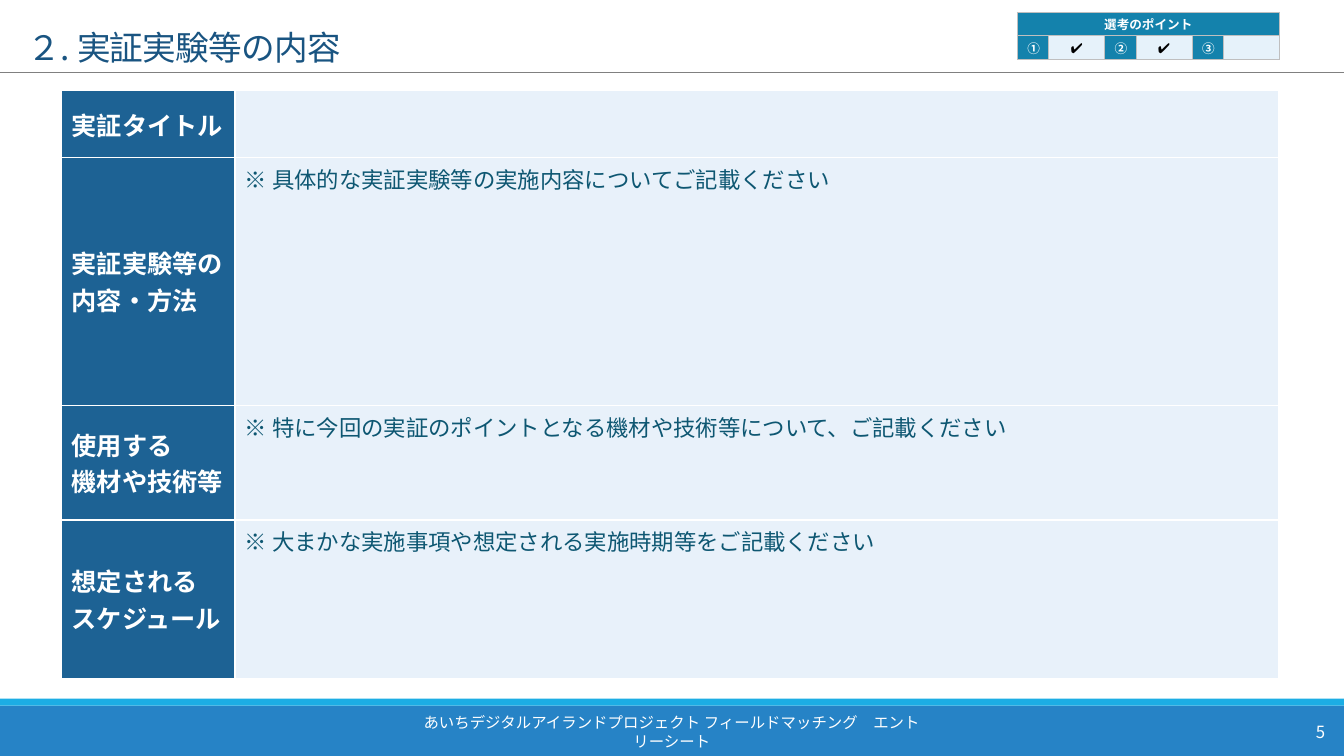
from dataclasses import dataclass

import pptx
import pptx.dml.color
import pptx.enum.shapes
import pptx.enum.text
import pptx.oxml
import pptx.oxml.ns
import pptx.util

FONT = "Noto Sans CJK JP"
WHITE, BLACK = "FFFFFF", "000000"
ALIGN = pptx.enum.text.PP_ALIGN
ANCHOR = pptx.enum.text.MSO_ANCHOR
qn = pptx.oxml.ns.qn

prs = pptx.Presentation()
prs.slide_width = pptx.util.Inches(13.33)
prs.slide_height = pptx.util.Inches(7.5)


@dataclass(frozen=True)
class Style:
    size: float
    color: str
    bold: bool = False
    align: ALIGN = ALIGN.LEFT
    anchor: ANCHOR = ANCHOR.MIDDLE
    hanging: float = 0  # inches


@dataclass(frozen=True)
class Cell:
    text: str
    fill: str
    style: Style


@dataclass(frozen=True)
class Box:
    """A place on a grid of 100 columns by 100 rows."""
    col: float
    row: float
    cols: float
    rows: float

    def emu(self) -> tuple[int, int, int, int]:
        return x(self.col), y(self.row), x(self.cols), y(self.rows)


def x(cols: float) -> int:
    return round(prs.slide_width * cols / 100)


def y(rows: float) -> int:
    return round(prs.slide_height * rows / 100)


def rgb(color: str) -> pptx.dml.color.RGBColor:
    return pptx.dml.color.RGBColor.from_string(color)


def write(tf, text: str, style: Style) -> None:
    """Put each line of the text in its own styled paragraph."""
    for i, line in enumerate(text.split("\n")):
        p = tf.add_paragraph() if i else tf.paragraphs[0]
        p.alignment = style.align
        p.font.name, p.font.bold = FONT, style.bold
        p.font.size = pptx.util.Pt(style.size)
        p.font.color.rgb = rgb(style.color)
        pPr = p._p.get_or_add_pPr()
        latin = pPr.find(qn("a:defRPr")).find(qn("a:latin"))
        ea = pptx.oxml.parse_xml(f'<a:ea {pptx.oxml.ns.nsdecls("a")} typeface="{FONT}"/>')
        latin.addnext(ea)
        if style.hanging:
            indent = pptx.util.Inches(style.hanging)
            pPr.set("marL", str(indent))
            pPr.set("indent", str(-indent))
        if line:
            p.add_run().text = line
        else:
            p._p.get_or_add_endParaRPr().set("sz", str(round(style.size * 100)))


def add_bar(slide, box: Box, color: str) -> None:
    sp = slide.shapes.add_shape(pptx.enum.shapes.MSO_SHAPE.RECTANGLE, *box.emu())
    sp.shadow.inherit = False
    sp.fill.solid()
    sp.fill.fore_color.rgb = rgb(color)
    sp.line.fill.background()


def add_rule(slide, row: float, color: str) -> None:
    line = slide.shapes.add_connector(
        pptx.enum.shapes.MSO_CONNECTOR.STRAIGHT, 0, y(row), x(100), y(row))
    line.line.color.rgb = rgb(color)
    line.line.width = pptx.util.Pt(0.5)
    line._element.spPr.append(
        pptx.oxml.parse_xml(f'<a:effectLst {pptx.oxml.ns.nsdecls("a")}/>'))


def add_text(slide, box: Box, text: str, style: Style) -> None:
    tf = slide.shapes.add_textbox(*box.emu()).text_frame
    tf.word_wrap = True
    tf.vertical_anchor = style.anchor
    write(tf, text, style)


def set_borders(cell, color: str, width: float) -> None:
    tcPr = cell._tc.get_or_add_tcPr()
    for i, side in enumerate(("lnL", "lnR", "lnT", "lnB")):
        tcPr.insert(i, pptx.oxml.parse_xml(
            f'<a:{side} {pptx.oxml.ns.nsdecls("a")} w="{pptx.util.Pt(width)}">'
            f'<a:solidFill><a:srgbClr val="{color}"/></a:solidFill></a:{side}>'))


def add_table(slide, col: float, row: float, cols: list[float], rows: list[float],
              cells: list[list[Cell]], border: tuple[str, float],
              margin: float = 0.05) -> None:
    """Draw a table; a row holding a single cell spans every column."""
    box = Box(col, row, sum(cols), sum(rows))
    table = slide.shapes.add_table(len(rows), len(cols), *box.emu()).table
    table.first_row = table.horz_banding = False
    for column, width in zip(table.columns, cols):
        column.width = x(width)
    for r, (height, row_cells) in enumerate(zip(rows, cells)):
        table.rows[r].height = y(height)
        if len(row_cells) == 1:
            table.cell(r, 0).merge(table.cell(r, len(cols) - 1))
        for c in range(len(cols)):
            cell = table.cell(r, c)
            set_borders(cell, *border)
            cell.margin_top = cell.margin_bottom = pptx.util.Inches(margin)
            if c < len(row_cells):
                content = row_cells[c]
                cell.fill.solid()
                cell.fill.fore_color.rgb = rgb(content.fill)
                cell.vertical_anchor = content.style.anchor
                write(cell.text_frame, content.text, content.style)


def add_title(slide, box: Box, text: str) -> None:
    title = slide.shapes.title
    title.left, title.top, title.width, title.height = box.emu()
    tf = title.text_frame
    tf.auto_size = pptx.enum.text.MSO_AUTO_SIZE.NONE
    tf.vertical_anchor = ANCHOR.BOTTOM
    write(tf, text, Style(24, "195481"))
    p = tf.paragraphs[0]
    p.line_spacing = 0.85
    p._p.pPr.find(qn("a:defRPr")).set("spc", "-50")


def main() -> None:
    slide = prs.slides.add_slide(prs.slide_layouts[5])
    add_bar(slide, Box(0, 93.33, 100, 6.67), "2683C6")
    add_bar(slide, Box(0, 92.4, 100, 0.93), "1CADE4")
    add_rule(slide, 9.6, "808080")
    add_title(slide, Box(1.28, 0, 98.72, 9.6), "２. 実証実験等の内容")

    label = Style(18, WHITE, bold=True)
    guide = Style(16, "0E5772", anchor=ANCHOR.TOP, hanging=0.29)
    entries = [
        ("実証タイトル", ""),
        ("実証実験等の\n内容・方法", "※ 具体的な実証実験等の実施内容についてご記載ください"),
        ("使用する\n機材や技術等",
         "※ 特に今回の実証のポイントとなる機材や技術等について、ご記載ください"),
        ("想定される\nスケジュール", "※ 大まかな実施事項や想定される実施時期等をご記載ください"),
    ]
    add_table(slide, 4.58, 12, [12.9, 77.64], [8.8, 32.8, 15.2, 20.93],
              [[Cell(name, "1D6294", label), Cell(note, "E8F1FA", guide)]
               for name, note in entries], (WHITE, 1))

    footer = "あいちデジタルアイランドプロジェクト フィールドマッチング　エントリーシート"
    add_text(slide, Box(30.23, 94.13, 39.53, 5.33), footer,
             Style(11, WHITE, align=ALIGN.CENTER))
    add_text(slide, Box(88.6, 94.13, 10.73, 5.33), "5",
             Style(12, WHITE, align=ALIGN.RIGHT))

    point = Style(9, WHITE, bold=True, align=ALIGN.CENTER)
    check = Style(10, BLACK, bold=True, align=ALIGN.CENTER)
    marks = [("①", "✔"), ("②", "✔"), ("③", "")]
    mark_cells = [cell for number, mark in marks
                  for cell in (Cell(number, "1482AC", point), Cell(mark, "E6F2FA", check))]
    add_table(slide, 75.69, 1.6, [2.34, 4.16] * len(marks), [3.13] * 2,
              [[Cell("選考のポイント", "1482AC", point)], mark_cells],
              ("BFBFBF", 0.5), margin=0.02)
    prs.save("out.pptx")


if __name__ == "__main__":
    main()
